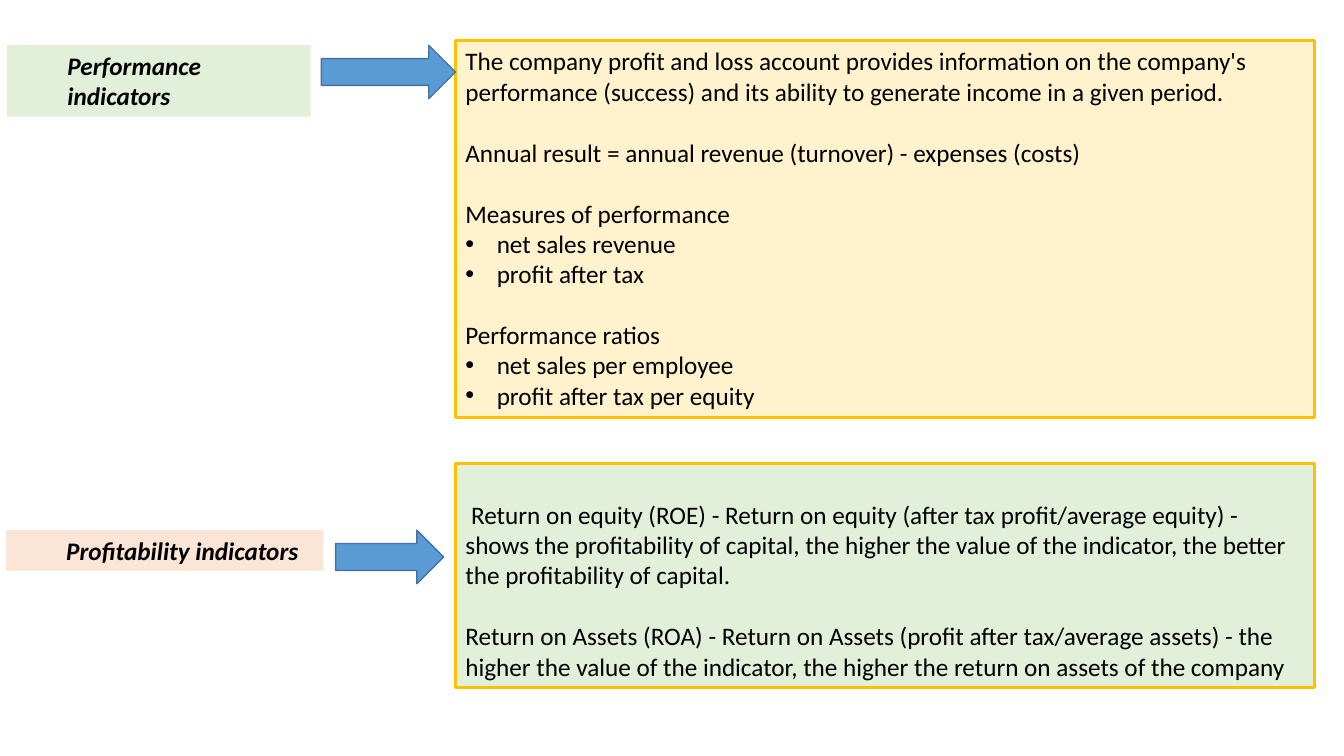
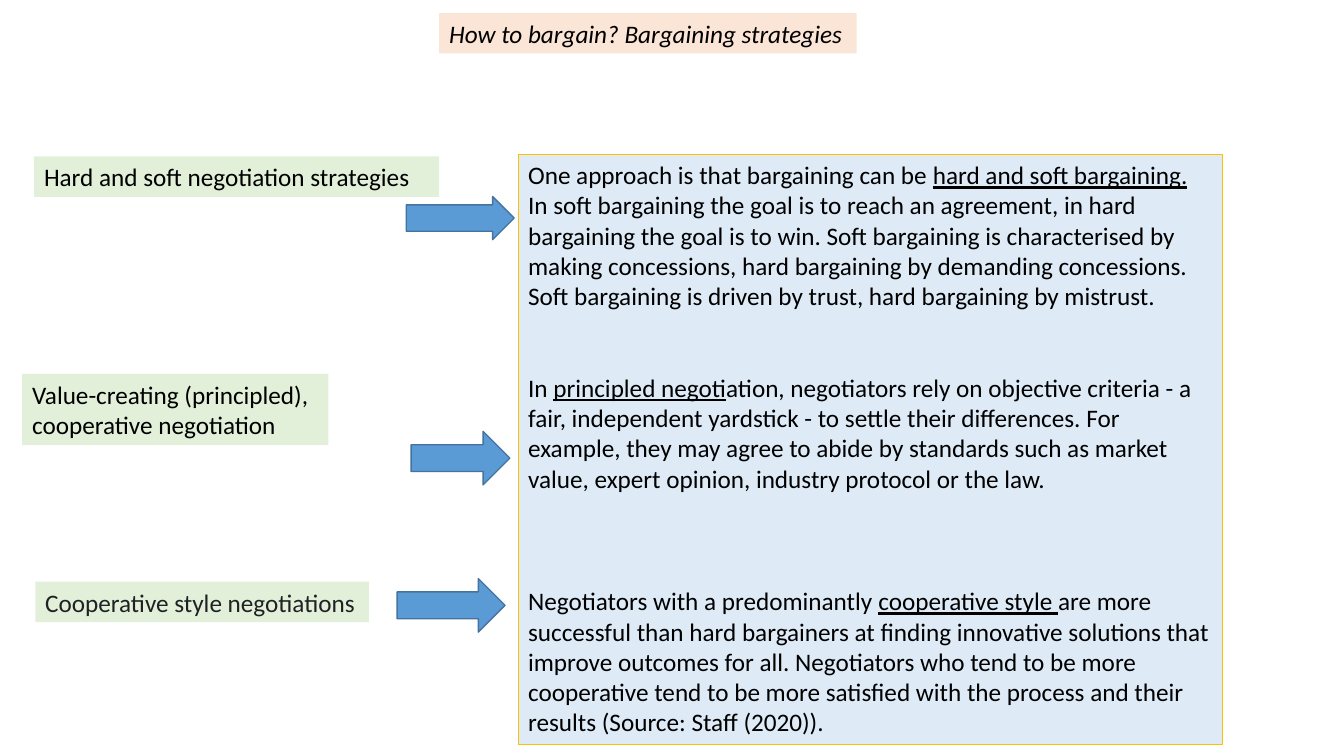
from lxml import etree
from pptx import Presentation
from pptx.dml.color import RGBColor
from pptx.enum.shapes import MSO_SHAPE
from pptx.enum.text import MSO_ANCHOR, PP_ALIGN
from pptx.oxml.ns import qn
from pptx.util import Cm, Pt

RIGHT_ARROW = MSO_SHAPE.RIGHT_ARROW
TOP = MSO_ANCHOR.TOP
LEFT = PP_ALIGN.LEFT

GREEN, PEACH, CREAM, PALE_BLUE = "E2F0D9", "FBE5D6", "FFF2CC", "DEEBF7"
GOLD, ARROW_FILL, ARROW_LINE = "FFC000", "5B9BD5", "43739E"
BLACK, CHARCOAL = "000000", "202124"
LINE_HEIGHT = 22
BULLET_INDENT = Cm(0.79)
INSET, INSET_TOP = 0.25, 0.13


def paint(shape, fill, line=None, weight=1):
    shape.fill.solid()
    shape.fill.fore_color.rgb = RGBColor.from_string(fill)
    if line:
        shape.line.color.rgb = RGBColor.from_string(line)
        shape.line.width = Pt(weight)


def add_text(page, place, paragraphs, insets=(INSET, INSET_TOP, INSET), color=BLACK, **style):
    """Add a text box; each paragraph is (empty lines above, bulleted, spans), every second span underlined."""
    box = page.shapes.add_textbox(*map(Cm, place))
    frame = box.text_frame
    left, top, right = map(Cm, insets)
    settings = {"word_wrap": True, "vertical_anchor": TOP, "margin_left": left,
                "margin_top": top, "margin_right": right, "margin_bottom": Cm(INSET_TOP)}
    for name, value in settings.items():
        setattr(frame, name, value)
    for number, (gap, bulleted, spans) in enumerate(paragraphs):
        para = frame.add_paragraph() if number else frame.paragraphs[0]
        para.alignment = LEFT
        para.space_before = Pt(gap * LINE_HEIGHT)
        if bulleted:
            properties = para._p.get_or_add_pPr()
            properties.set("marL", str(BULLET_INDENT))
            properties.set("indent", str(-BULLET_INDENT))
            etree.SubElement(properties, qn("a:buFont")).set("typeface", "Arial")
            etree.SubElement(properties, qn("a:buChar")).set("char", "•")
        for position, text in enumerate(spans):
            span = para.add_run()
            span.text = text
            font = {"name": "Calibri", "size": Pt(18), "underline": position % 2 == 1, **style}
            for name, value in font.items():
                setattr(span.font, name, value)
            span.font.color.rgb = RGBColor.from_string(color)
    return box


deck = Presentation()
deck.slide_width, deck.slide_height = Cm(33.87), Cm(19.05)
indicators, bargaining = [deck.slides.add_slide(deck.slide_layouts[6]) for _ in range(2)]

# Performance and profitability indicators
for place, fill, text in [
    ((0.18, 1.14, 7.65, 1.8), GREEN, "Performance indicators"),
    ((0.15, 13.36, 8, 1.02), PEACH, "Profitability indicators"),
]:
    label = add_text(indicators, place, [(0, False, [text])],
                     insets=(1.52, INSET_TOP, INSET), bold=True, italic=True)
    paint(label, fill)

performance = [
    (0, False, ["The company profit and loss account provides information on the company's "
                "performance (success) and its ability to generate income in a given period."]),
    (1, False, ["Annual result = annual revenue (turnover) - expenses (costs)"]),
    (1, False, ["Measures of performance"]),
    (0, True, ["net sales revenue"]),
    (0, True, ["profit after tax"]),
    (1, False, ["Performance ratios"]),
    (0, True, ["net sales per employee"]),
    (0, True, ["profit after tax per equity"]),
]
profitability = [
    (0, False, [" Return on equity (ROE) - Return on equity (after tax profit/average equity) - "
                "shows the profitability of capital, the higher the value of the indicator, "
                "the better the profitability of capital."]),
    (1, False, ["Return on Assets (ROA) - Return on Assets (profit after tax/average assets) - "
                "the higher the value of the indicator, the higher the return on assets of the company"]),
]
for top, height, inset_top, fill, paragraphs in [
    (1.02, 9.5, INSET_TOP, CREAM, performance),
    (11.68, 5.64, 0.9, GREEN, profitability),
]:
    panel = add_text(indicators, (11.48, top, 21.64, height), paragraphs,
                     insets=(INSET, inset_top, INSET))
    paint(panel, fill, GOLD, 2.25)

# Bargaining strategies
title = add_text(bargaining, (11.07, 0.33, 10.52, 1.02),
                 [(0, False, ["How to bargain? Bargaining strategies"])],
                 insets=(INSET, INSET_TOP, 0), italic=True)
paint(title, PEACH)

strategies = [
    (0, False, ["One approach is that bargaining can be ", "hard and soft bargaining.",
                " In soft bargaining the goal is to reach an agreement, in hard bargaining the goal "
                "is to win. Soft bargaining is characterised by making concessions, hard bargaining "
                "by demanding concessions. Soft bargaining is driven by trust, hard bargaining by "
                "mistrust."]),
    (2, False, ["In ", "principled negoti",
                "ation, negotiators rely on objective criteria - a fair, independent yardstick - to "
                "settle their differences. For example, they may agree to abide by standards such as "
                "market value, expert opinion, industry protocol or the law."]),
    (3, False, ["Negotiators with a predominantly ", "cooperative style ",
                "are more successful than hard bargainers at finding innovative solutions that "
                "improve outcomes for all. Negotiators who tend to be more cooperative tend to be "
                "more satisfied with the process and their results (Source: Staff (2020))."]),
]
paint(add_text(bargaining, (13.06, 3.89, 17.75, 14.88), strategies), PALE_BLUE, GOLD, 0.75)

for place, color, lines in [
    ((0.86, 3.94, 10.21, 1.02), BLACK, ["Hard and soft negotiation strategies"]),
    ((0.56, 9.42, 7.72, 1.8), BLACK, ["Value-creating (principled),", "cooperative negotiation"]),
    ((0.89, 14.66, 8.41, 1.02), CHARCOAL, ["Cooperative style negotiations"]),
]:
    label = add_text(bargaining, place, [(0, False, [line]) for line in lines],
                     insets=(INSET, INSET_TOP, 0), color=color)
    paint(label, GREEN)

# Arrows from the labels to the panels
for page, place, shaft in [
    (indicators, (8.1, 1.14, 3.38, 1.35), 0.5),
    (indicators, (8.46, 13.36, 2.72, 1.35), 0.5),
    (bargaining, (10.01, 14.58, 2.72, 1.35), 0.5),
    (bargaining, (10.24, 4.95, 2.72, 1.09), 0.61),
    (bargaining, (10.36, 10.87, 2.49, 1.35), 0.5),
]:
    arrow = page.shapes.add_shape(RIGHT_ARROW, *map(Cm, place))
    arrow.shadow.inherit = False
    arrow.adjustments[0] = shaft
    paint(arrow, ARROW_FILL, ARROW_LINE)

deck.save("out.pptx")
